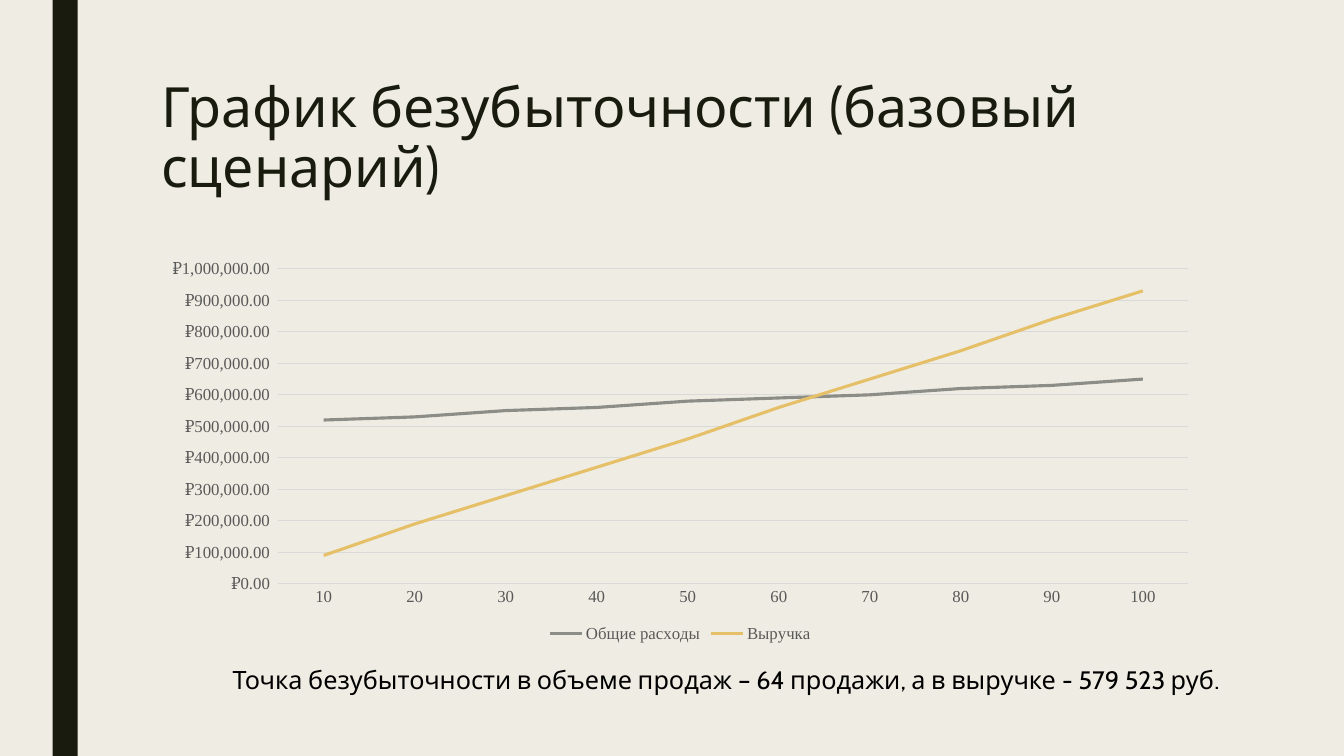
import pptx
import pptx.util
import pptx.chart.data
import pptx.dml.color
import pptx.enum.chart
import pptx.enum.shapes
import pptx.enum.text

Pt = pptx.util.Pt

COLORS = {
    "background": "EFEDE3",
    "dark": "191B0E",
    "caption": "000000",
    "label": "595959",
    "grid": "D9D9D9",
    "costs": "8C8D86",
    "revenue": "E6C069",
}
HEADING_FONT = "Cabin"
CHART_FONT = "Times New Roman"
SALES = range(10, 101, 10)
SERIES = [
    ("Общие расходы", "costs",
     [520000, 530000, 550000, 560000, 580000, 590000, 600000, 620000, 630000, 650000]),
    ("Выручка", "revenue",
     [90000, 190000, 280000, 370000, 460000, 560000, 650000, 740000, 840000, 930000]),
]
RUBLES = '"₽"#,##0.00_);[Red]\\("₽"#,##0.00\\)'


def rgb(name):
    """Return the named colour."""
    return pptx.dml.color.RGBColor.from_string(COLORS[name])


def style_font(font, face, size, color):
    """Set the face, size and colour of a font."""
    font.name = face
    font.size = Pt(size)
    font.color.rgb = rgb(color)


def style_line(line, color, width):
    """Set the colour and width of a line."""
    line.color.rgb = rgb(color)
    line.width = Pt(width)


def add_side_bar(slide, left, top, width, height):
    """Draw the dark vertical bar."""
    bar = slide.shapes.add_shape(
        pptx.enum.shapes.MSO_SHAPE.RECTANGLE, Pt(left), Pt(top), Pt(width), Pt(height))
    bar.shadow.inherit = False
    bar.fill.solid()
    bar.fill.fore_color.rgb = rgb("dark")
    bar.line.fill.background()


def add_heading(slide, left, top, width, height):
    """Place and fill the title placeholder."""
    heading = slide.shapes.title
    heading.left, heading.top = Pt(left), Pt(top)
    heading.width, heading.height = Pt(width), Pt(height)
    frame = heading.text_frame
    frame.word_wrap = True
    frame.auto_size = pptx.enum.text.MSO_AUTO_SIZE.NONE
    frame.vertical_anchor = pptx.enum.text.MSO_ANCHOR.TOP
    paragraph = frame.paragraphs[0]
    paragraph.alignment = pptx.enum.text.PP_ALIGN.LEFT
    paragraph.line_spacing = 0.89
    run = paragraph.add_run()
    run.text = "График безубыточности (базовый сценарий)"
    style_font(run.font, HEADING_FONT, 39.6, "dark")


def add_break_even_chart(slide, left, top, width, height):
    """Draw costs and revenue against the number of sales."""
    data = pptx.chart.data.CategoryChartData(number_format=RUBLES)
    data.categories = [str(count) for count in SALES]
    for name, _, values in SERIES:
        data.add_series(name, values)
    chart = slide.shapes.add_chart(
        pptx.enum.chart.XL_CHART_TYPE.LINE,
        Pt(left), Pt(top), Pt(width), Pt(height), data).chart
    style_font(chart.font, CHART_FONT, 12, "label")
    chart.has_title = False

    plot = chart.plots[0]
    plot.vary_by_categories = False
    for series, (_, color, _) in zip(plot.series, SERIES):
        series.smooth = False
        series.marker.style = pptx.enum.chart.XL_MARKER_STYLE.NONE
        style_line(series.format.line, color, 2.25)

    sales_axis, rubles_axis = chart.category_axis, chart.value_axis
    for axis in (sales_axis, rubles_axis):
        axis.major_tick_mark = pptx.enum.chart.XL_TICK_MARK.NONE
        axis.minor_tick_mark = pptx.enum.chart.XL_TICK_MARK.NONE
        style_font(axis.tick_labels.font, CHART_FONT, 12, "label")
    style_line(sales_axis.format.line, "grid", 0.75)
    rubles_axis.format.line.fill.background()
    rubles_axis.minimum_scale = 0
    rubles_axis.maximum_scale = 1000000
    rubles_axis.major_unit = 100000
    rubles_axis.tick_labels.number_format = RUBLES
    rubles_axis.tick_labels.number_format_is_linked = False
    rubles_axis.has_major_gridlines = True
    style_line(rubles_axis.major_gridlines.format.line, "grid", 0.75)

    chart.has_legend = True
    chart.legend.position = pptx.enum.chart.XL_LEGEND_POSITION.BOTTOM
    chart.legend.include_in_layout = False
    style_font(chart.legend.font, CHART_FONT, 12, "label")


def add_conclusion(slide, left, top, width, height):
    """Write the break-even point below the chart."""
    conclusion = slide.shapes.add_textbox(Pt(left), Pt(top), Pt(width), Pt(height))
    frame = conclusion.text_frame
    frame.word_wrap = True
    frame.auto_size = pptx.enum.text.MSO_AUTO_SIZE.SHAPE_TO_FIT_TEXT
    run = frame.paragraphs[0].add_run()
    run.text = ("Точка безубыточности в объеме продаж – 64 продажи, "
                "а в выручке - 579 523 руб.")
    style_font(run.font, HEADING_FONT, 18, "caption")


def main():
    """Build and save the slide."""
    deck = pptx.Presentation()
    deck.slide_width, deck.slide_height = Pt(960), Pt(540)
    slide = deck.slides.add_slide(deck.slide_layouts[5])
    slide.background.fill.solid()
    slide.background.fill.fore_color.rgb = rgb("background")
    add_side_bar(slide, 37.5, 0, 18, 540)
    add_heading(slide, 108, 54, 756, 117)
    add_break_even_chart(slide, 108, 180, 756, 282)
    add_conclusion(slide, 159, 471, 747, 29)
    deck.save("out.pptx")


if __name__ == "__main__":
    main()
